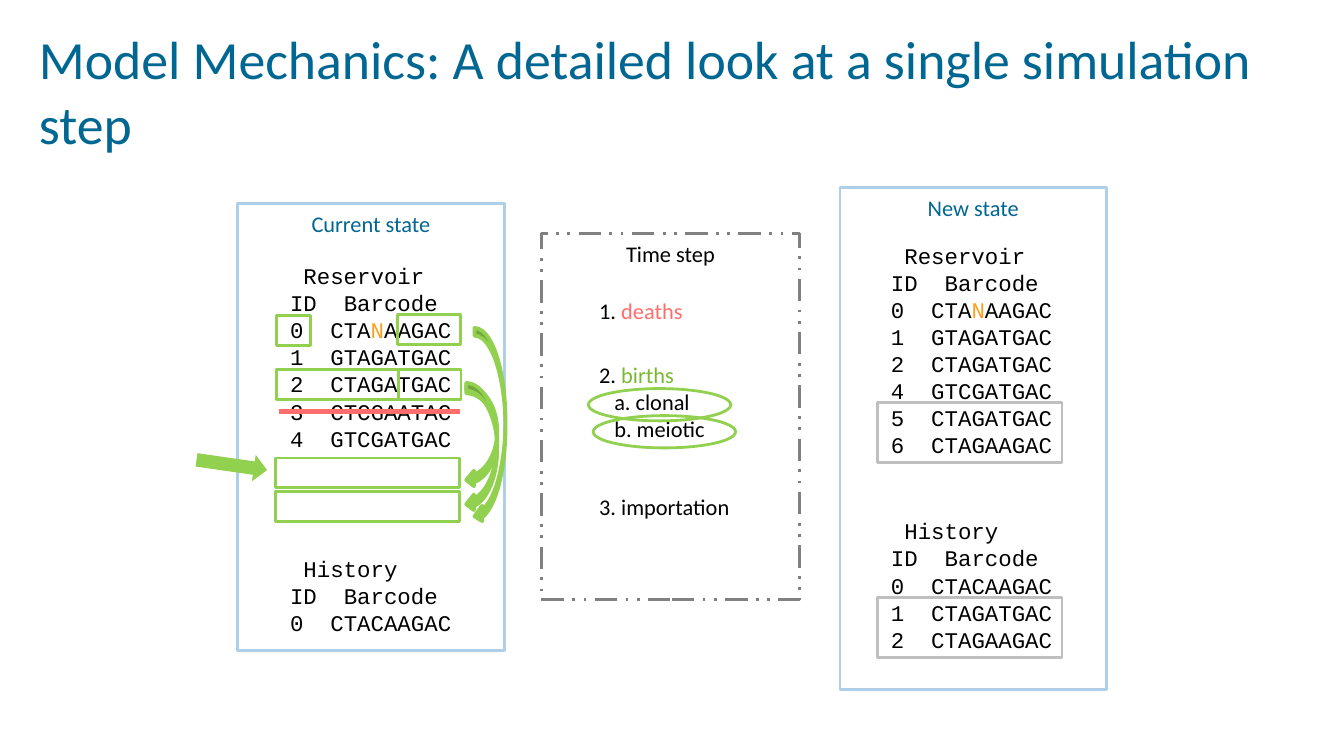
from dataclasses import dataclass

from lxml.etree import SubElement
from pptx import Presentation
from pptx.dml.color import RGBColor
from pptx.enum.dml import MSO_LINE
from pptx.enum.shapes import MSO_CONNECTOR, MSO_SHAPE
from pptx.enum.text import MSO_ANCHOR, MSO_AUTO_SIZE, PP_ALIGN
from pptx.oxml.ns import qn
from pptx.util import Pt


@dataclass(frozen=True)
class Theme:
    title: str = "006692"
    panel: str = "AFCEE7"
    text: str = "000000"
    dash: str = "808080"
    added: str = "BFBFBF"
    mutation: str = "FF9F1F"
    death: str = "FF6D6D"
    birth: str = "78B832"
    birth_line: str = "92D050"
    sans: str = "Calibri"
    mono: str = "Courier New"
    title_size: float = 28.8
    body_size: float = 12
    row_height: float = 14.5


theme = Theme()


def add_run(paragraph, text, color=theme.text, font=theme.sans, size=theme.body_size):
    run = paragraph.add_run()
    run.text = text
    run.font.name = font
    run.font.size = Pt(size)
    run.font.color.rgb = RGBColor.from_string(color)


def add_outline(kind, box, color, width=1.5, filled=False):
    shape = slide.shapes.add_shape(kind, *map(Pt, box))
    shape.shadow.inherit = False
    shape.line.color.rgb = RGBColor.from_string(color)
    shape.line.width = Pt(width)
    if filled:
        shape.fill.solid()
        shape.fill.fore_color.rgb = RGBColor.from_string(color)
    else:
        shape.fill.background()
    return shape


presentation = Presentation()
presentation.slide_width = Pt(720)
presentation.slide_height = Pt(405)
slide = presentation.slides.add_slide(presentation.slide_layouts[5])

title = slide.shapes.title
title.left, title.top, title.width, title.height = Pt(14.4), Pt(10.8), Pt(687.6), Pt(48.2)
frame = title.text_frame
frame.auto_size = MSO_AUTO_SIZE.NONE
frame.vertical_anchor = MSO_ANCHOR.TOP
frame.margin_left = frame.margin_right = Pt(6.5)
frame.margin_top = frame.margin_bottom = Pt(3.2)
frame.paragraphs[0].alignment = PP_ALIGN.LEFT
add_run(frame.paragraphs[0], "Model Mechanics: A detailed look at a single simulation step",
        theme.title, size=theme.title_size)

panels = [
    ("Current state", (127.4, 108.9, 142.8, 239.8), theme.panel, theme.title),
    ("New state", (450, 100.3, 142.8, 269.1), theme.panel, theme.title),
    ("Time step", (290, 125, 138.4, 196.3), theme.dash, theme.text),
]
for heading, box, line_color, text_color in panels:
    panel = add_outline(MSO_SHAPE.RECTANGLE, box, line_color)
    if heading == "Time step":
        panel.line.dash_style = MSO_LINE.DASH_DOT_DOT
    panel.text_frame.vertical_anchor = MSO_ANCHOR.TOP
    panel.text_frame.paragraphs[0].alignment = PP_ALIGN.CENTER
    add_run(panel.text_frame.paragraphs[0], heading, text_color)

listings = [
    (148.3, 136.8, "Reservoir", ["CTANAAGAC", "GTAGATGAC", "CTAGATGAC", "CTCGAATAC", "GTCGATGAC"],
     [0, 1, 2, 3, 4]),
    (148.3, 293.8, "History", ["CTACAAGAC"], [0]),
    (470.2, 126, "Reservoir", ["CTANAAGAC", "GTAGATGAC", "CTAGATGAC", "GTCGATGAC", "CTAGATGAC",
                               "CTAGAAGAC"], [0, 1, 2, 4, 5, 6]),
    (470.2, 273.6, "History", ["CTACAAGAC", "CTAGATGAC", "CTAGAAGAC"], [0, 1, 2]),
]
character = 7.2
for left, top, heading, barcodes, identifiers in listings:
    rows = [heading, "ID\tBarcode"]
    rows += [f"{identifier}\t{barcode}" for identifier, barcode in zip(identifiers, barcodes)]
    height = len(rows) * theme.row_height + 7.2
    frame = slide.shapes.add_textbox(Pt(left), Pt(top), Pt(100.8), Pt(height)).text_frame
    frame.word_wrap = False
    for index, row in enumerate(rows):
        paragraph = frame.paragraphs[0] if index == 0 else frame.add_paragraph()
        paragraph.line_spacing = Pt(theme.row_height)
        properties = paragraph._p.get_or_add_pPr()
        if index == 0:
            properties.set("marL", str(Pt(character)))
        else:
            columns = 4 if index == 1 else 3
            tabs = SubElement(properties, qn("a:tabLst"))
            SubElement(tabs, qn("a:tab"), pos=str(Pt(columns * character)), algn="l")
        before, mutation, after = row.partition("N")
        add_run(paragraph, before, font=theme.mono)
        if mutation:
            add_run(paragraph, mutation, theme.mutation, theme.mono)
            add_run(paragraph, after, font=theme.mono)

steps = [
    (155.5, "1. ", "deaths", theme.death, []),
    (190.1, "2. ", "births", theme.birth, ["a. clonal", "b. meiotic"]),
    (260.6, "3. ", "importation", theme.text, []),
]
for top, number, name, color, details in steps:
    height = 21.8 + len(details) * theme.row_height
    frame = slide.shapes.add_textbox(Pt(313.9), Pt(top), Pt(90.7), Pt(height)).text_frame
    frame.word_wrap = True
    add_run(frame.paragraphs[0], number)
    add_run(frame.paragraphs[0], name, color)
    for detail in details:
        paragraph = frame.add_paragraph()
        paragraph._p.get_or_add_pPr().set("marL", str(Pt(8.1)))
        add_run(paragraph, detail)

death_line = slide.shapes.add_connector(MSO_CONNECTOR.STRAIGHT, Pt(149.3), Pt(220.5), Pt(246.2), Pt(220.5))
death_line.line.color.rgb = RGBColor.from_string(theme.death)
death_line.line.width = Pt(2.25)
SubElement(death_line._element.spPr, qn("a:effectLst"))

row_width, box_height = 98.8, 16
birth_boxes = [
    (148.2, 198, row_width),
    (148.2, 198, 65.5),
    (148.2, 169.2, 18),
    (213.1, 168.5, 33.8),
    (147.6, 245.4, row_width),
    (147.6, 263.4, row_width),
]
for left, top, width in birth_boxes:
    add_outline(MSO_SHAPE.RECTANGLE, (left, top, width, box_height), theme.birth_line)

for left, top in [(315.2, 208.2), (317.8, 222.7)]:
    add_outline(MSO_SHAPE.OVAL, (left, top, 76.3, 17.3), theme.birth_line)

for left, top, height in [(249.8, 206.6, 54.7), (254.2, 175.7, 105.1), (249.8, 205.2, 69.1)]:
    add_outline(MSO_SHAPE.CURVED_LEFT_ARROW, (left, top, 16.6, height), theme.birth_line, 2, True)

for top in (215.6, 319.9):
    add_outline(MSO_SHAPE.RECTANGLE, (470.2, top, row_width, 32.4), theme.added)

import_arrow = add_outline(MSO_SHAPE.RIGHT_ARROW, (105.1, 241.9, 38.2, 14.4), theme.birth_line, filled=True)
import_arrow.line.fill.background()
import_arrow.rotation = 8.2

presentation.save("out.pptx")
